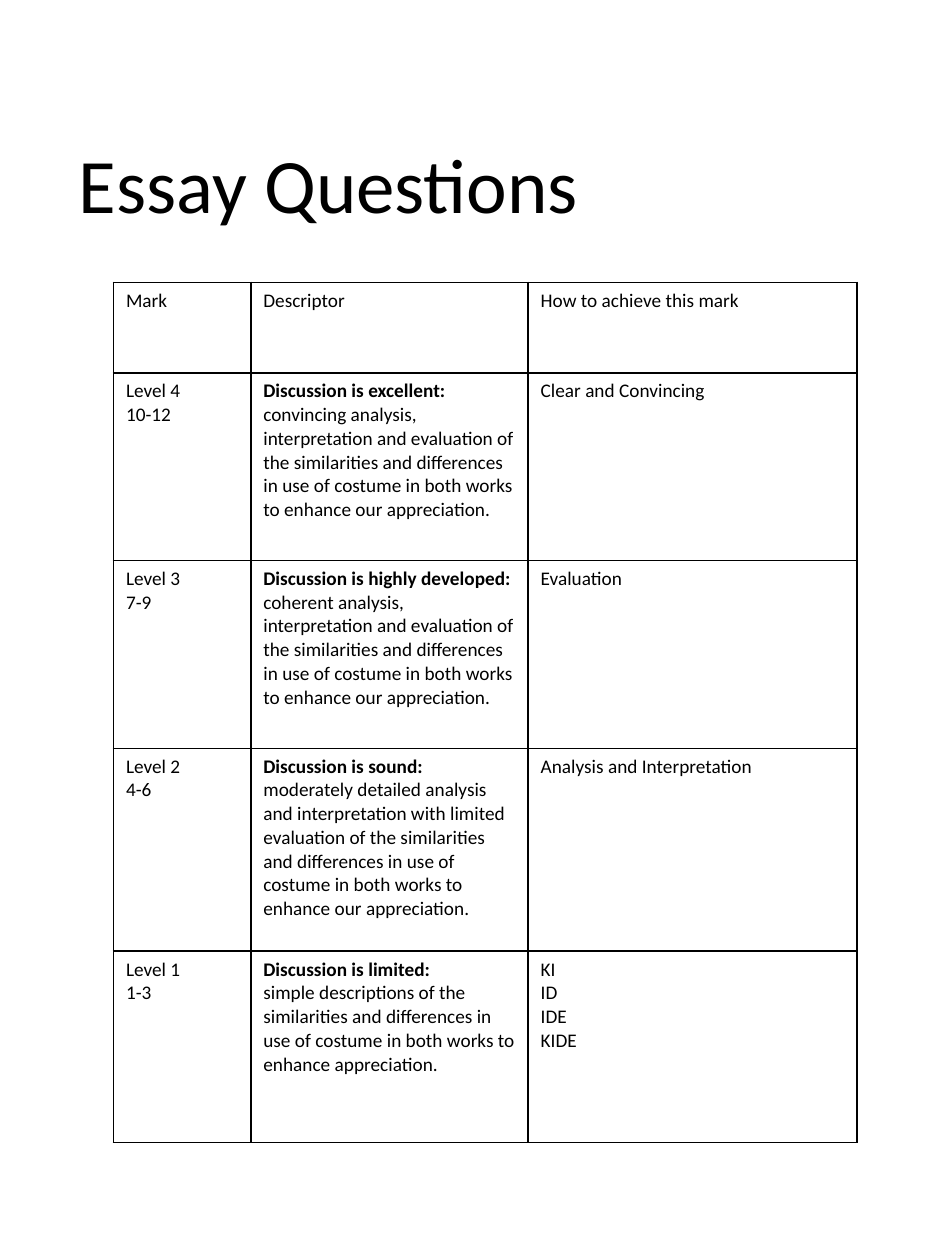
from lxml.etree import SubElement
from pptx import Presentation
from pptx.dml.color import RGBColor as RGB
from pptx.enum.text import MSO_ANCHOR as Anchor, MSO_AUTO_SIZE as AutoSize, PP_ALIGN as Align
from pptx.oxml.ns import qn
from pptx.util import Inches, Pt

COLORS = {"text": "000000", "border": "000000", "page": "FFFFFF"}
FONT = "Calibri"
WIDTH, HEIGHT = Inches(7.5), Inches(10)
COLUMNS = [1.09, 2.2, 2.61]
ROWS = [0.72, 1.49, 1.49, 1.61, 1.52]
COSTUME = "the similarities and differences in use of costume in both works to enhance"
ANALYSIS = f"analysis, interpretation and evaluation of {COSTUME} our appreciation."
RUBRIC = [
    [["Mark"], ["Descriptor"], ["How to achieve this mark"]],
    [["Level 4", "10-12"],
     [("Discussion is excellent:", ""), f"convincing {ANALYSIS}"],
     ["Clear and Convincing"]],
    [["Level 3", "7-9"],
     [("Discussion is highly developed: ", f"coherent {ANALYSIS}")],
     ["Evaluation"]],
    [["Level 2", "4-6"],
     [("Discussion is sound:", ""),
      f"moderately detailed analysis and interpretation with limited evaluation of {COSTUME} our appreciation."],
     ["Analysis and Interpretation"]],
    [["Level 1", "1-3"],
     [("Discussion is limited:", ""), f"simple descriptions of {COSTUME} appreciation."],
     ["KI", "ID", "IDE", "KIDE"]],
]


def share(x, y, w, h):
    return int(x * WIDTH), int(y * HEIGHT), int(w * WIDTH), int(h * HEIGHT)


def style(p, size):
    p.font.name = FONT
    p.font.size = Pt(size)
    p.font.color.rgb = RGB.from_string(COLORS["text"])
    p.alignment = Align.LEFT


def add_title(s, box, text):
    sp = s.shapes.title
    sp.left, sp.top, sp.width, sp.height = box
    tf = sp.text_frame
    tf.text = text
    tf.word_wrap = True
    tf.auto_size = AutoSize.NONE
    tf.vertical_anchor = Anchor.MIDDLE
    p = tf.paragraphs[0]
    p.line_spacing = 0.9
    style(p, 44)


def add_borders(cell):
    tc_pr = cell._tc.get_or_add_tcPr()
    for i, side in enumerate(("a:lnL", "a:lnR", "a:lnT", "a:lnB")):
        ln = tc_pr.makeelement(qn(side), {"w": str(Pt(1))})
        fill = SubElement(ln, qn("a:solidFill"))
        SubElement(fill, qn("a:srgbClr"), val=COLORS["border"])
        tc_pr.insert(i, ln)


def fill_cell(cell, paragraphs):
    tf = cell.text_frame
    for i, content in enumerate(paragraphs):
        p = tf.add_paragraph() if i else tf.paragraphs[0]
        style(p, 11)
        heading, body = content if isinstance(content, tuple) else ("", content)
        for text, bold in ((heading, True), (body, False)):
            if text:
                r = p.add_run()
                r.text = text
                r.font.bold = bold
    cell.fill.solid()
    cell.fill.fore_color.rgb = RGB.from_string(COLORS["page"])
    add_borders(cell)


def add_rubric(s, box, rows):
    table = s.shapes.add_table(len(ROWS), len(COLUMNS), *box).table
    table.first_row = table.horz_banding = False
    for column, part in zip(table.columns, COLUMNS):
        column.width = int(box[2] * part / sum(COLUMNS))
    for row, part, contents in zip(table.rows, ROWS, rows):
        row.height = int(box[3] * part / sum(ROWS))
        for cell, paragraphs in zip(row.cells, contents):
            fill_cell(cell, paragraphs)


def main():
    prs = Presentation()
    prs.slide_width, prs.slide_height = WIDTH, HEIGHT
    s = prs.slides.add_slide(prs.slide_layouts[5])
    add_title(s, share(0.07, 0.053, 0.86, 0.193), "Essay Questions")
    add_rubric(s, share(0.12, 0.224, 0.787, 0.683), RUBRIC)
    prs.save("out.pptx")


if __name__ == "__main__":
    main()
